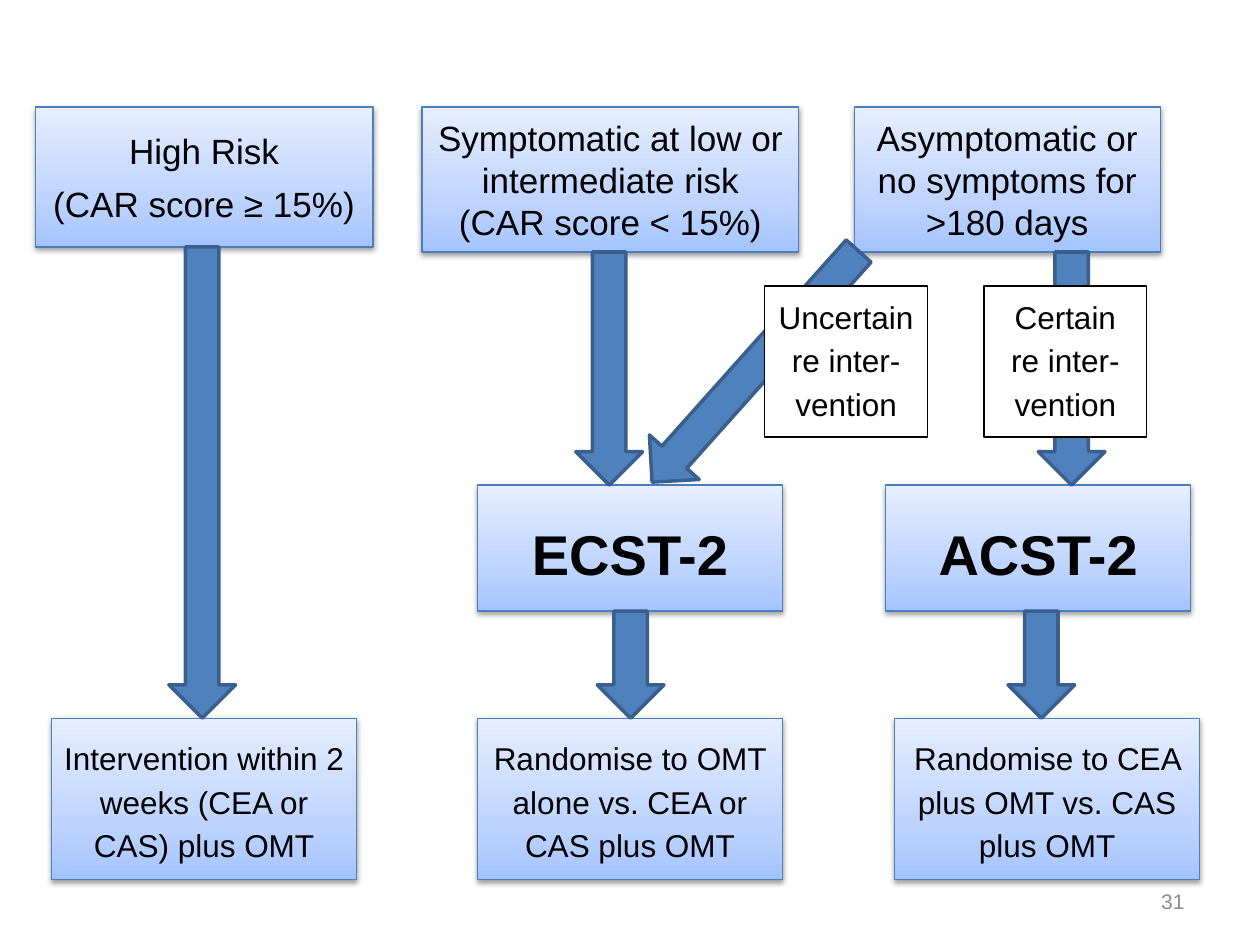
import copy

import lxml.etree
import pptx
import pptx.dml.color
import pptx.enum.shapes
import pptx.enum.text
import pptx.oxml.ns
import pptx.util

THEME = {
    "font": "Arial",
    "ink": "000000",
    "muted": "8C8C8C",
    "paper": "FFFFFF",
    "gradient": [(0, "A4C4FF"), (0.35, "BFD4FF"), (1, "E6EEFF")],
    "box_line": "4B7EBC",
    "arrow": "4F81BD",
    "arrow_line": "3A5F8C",
    "number": 12,
    "body": 18,
    "group": 20,
    "trial": 32,
}
SHAPE = pptx.enum.shapes.MSO_SHAPE
ALIGN = pptx.enum.text.PP_ALIGN
ANCHOR = pptx.enum.text.MSO_ANCHOR
rgb = pptx.dml.color.RGBColor.from_string
qn = pptx.oxml.ns.qn

prs = pptx.Presentation()
prs.slide_width = pptx.util.Inches(10)
prs.slide_height = pptx.util.Inches(7.5)
s = prs.slides.add_slide(prs.slide_layouts[6])
UNIT = prs.slide_width / 10  # the slide is a grid of 10 columns by 7.5 rows


def add(kind, left, top, width, height, line, weight):
    """Add a shape without shadow, placed in grid units."""
    sp = s.shapes.add_shape(kind, *[round(v * UNIT) for v in (left, top, width, height)])
    sp.shadow.inherit = False
    sp.line.color.rgb = rgb(line)
    sp.line.width = pptx.util.Pt(weight)
    return sp


def write(sp, text, size, bold=False, color=THEME["ink"], align=ALIGN.CENTER,
          anchor=ANCHOR.MIDDLE, spacing=1.0, before=0):
    tf = sp.text_frame
    tf.word_wrap = True
    tf.vertical_anchor = anchor
    for i, line in enumerate(text.split("\n")):
        p = tf.paragraphs[0] if i == 0 else tf.add_paragraph()
        p.alignment = align
        p.line_spacing = spacing
        p.space_before = pptx.util.Pt(before)
        r = p.add_run()
        r.text = line
        r.font.name = THEME["font"]
        r.font.size = pptx.util.Pt(size)
        r.font.bold = bold
        r.font.color.rgb = rgb(color)


# Rows of the flow chart
GROUP_TOP, TRIAL_TOP, OUTCOME_TOP = 0.85, 3.85, 5.7
TRIAL_H, OUTCOME_H, BOX_W = 1.0, 1.28, 2.42
GROUP_H = 1.15
GROUP_END = GROUP_TOP + GROUP_H
HIGH_RISK_H = 1.11

group = {"size": THEME["group"]}
trial = {"size": THEME["trial"], "bold": True, "spacing": 1.15, "before": 6}
outcome = {"size": THEME["body"], "spacing": 1.15, "before": 6}

boxes = [
    (0.28, GROUP_TOP, 2.68, HIGH_RISK_H, "High Risk\n(CAR score ≥ 15%)", {**group, "before": 6}),
    (3.35, GROUP_TOP, 2.99, GROUP_H,
     "Symptomatic at low or intermediate risk\n(CAR score < 15%)", group),
    (6.78, GROUP_TOP, 2.43, GROUP_H,
     "Asymptomatic or no symptoms for >180 days", {**group, "before": 6}),
    (3.79, TRIAL_TOP, BOX_W, TRIAL_H, "ECST-2", trial),
    (7.03, TRIAL_TOP, BOX_W, TRIAL_H, "ACST-2", trial),
    (0.41, OUTCOME_TOP, BOX_W, OUTCOME_H,
     "Intervention within 2 weeks (CEA or CAS) plus OMT", outcome),
    (3.79, OUTCOME_TOP, BOX_W, OUTCOME_H,
     "Randomise to OMT alone vs. CEA or CAS plus OMT", outcome),
    (7.1, OUTCOME_TOP, BOX_W, OUTCOME_H,
     "Randomise to CEA plus OMT vs. CAS plus OMT", outcome),
]
for left, top, width, height, text, style in boxes:
    sp = add(SHAPE.RECTANGLE, left, top, width, height, THEME["box_line"], 0.75)
    sp.fill.gradient()
    sp.fill.gradient_angle = 90
    first = sp._element.spPr.find(".//" + qn("a:gs"))
    first.addnext(copy.deepcopy(first))
    for stop, (position, color) in zip(sp.fill.gradient_stops, THEME["gradient"]):
        stop.position = position
        stop.color.rgb = rgb(color)
    effects = sp._element.spPr.find(qn("a:effectLst"))
    shadow = lxml.etree.SubElement(effects, qn("a:outerShdw"), blurRad="40000",
                                   dist="20000", dir="5400000", rotWithShape="0")
    black = lxml.etree.SubElement(shadow, qn("a:srgbClr"), val=THEME["ink"])
    lxml.etree.SubElement(black, qn("a:alpha"), val="38000")
    write(sp, text, **style)

# Arrows: left, top, height, rotation
ARROW_W = 0.53
arrows = [
    (1.34, GROUP_TOP + HIGH_RISK_H, OUTCOME_TOP - GROUP_TOP - HIGH_RISK_H, 0),
    (5.73, 1.68, 2.46, 41.8),
    (4.57, GROUP_END, TRIAL_TOP - GROUP_END, 0),
    (8.24, GROUP_END, TRIAL_TOP - GROUP_END, 0),
    (4.74, TRIAL_TOP + TRIAL_H, OUTCOME_TOP - TRIAL_TOP - TRIAL_H, 0),
    (8.0, TRIAL_TOP + TRIAL_H, OUTCOME_TOP - TRIAL_TOP - TRIAL_H, 0),
]
for left, top, height, rotation in arrows:
    sp = add(SHAPE.DOWN_ARROW, left, top, ARROW_W, height, THEME["arrow_line"], 2)
    sp.rotation = rotation
    sp.fill.solid()
    sp.fill.fore_color.rgb = rgb(THEME["arrow"])

# Labels on the two arrows from the asymptomatic group
for left, certainty in [(6.07, "Uncertain"), (7.81, "Certain")]:
    sp = add(SHAPE.RECTANGLE, left, 2.27, 1.29, 1.2, THEME["ink"], 0.75)
    sp.fill.solid()
    sp.fill.fore_color.rgb = rgb(THEME["paper"])
    write(sp, certainty + " re inter-vention", THEME["body"], anchor=ANCHOR.TOP, spacing=1.15)

number = s.shapes.add_textbox(*[round(v * UNIT) for v in (7.17, 6.95, 2.33, 0.4)])
write(number, "31", THEME["number"], color=THEME["muted"], align=ALIGN.RIGHT)

prs.save("out.pptx")
